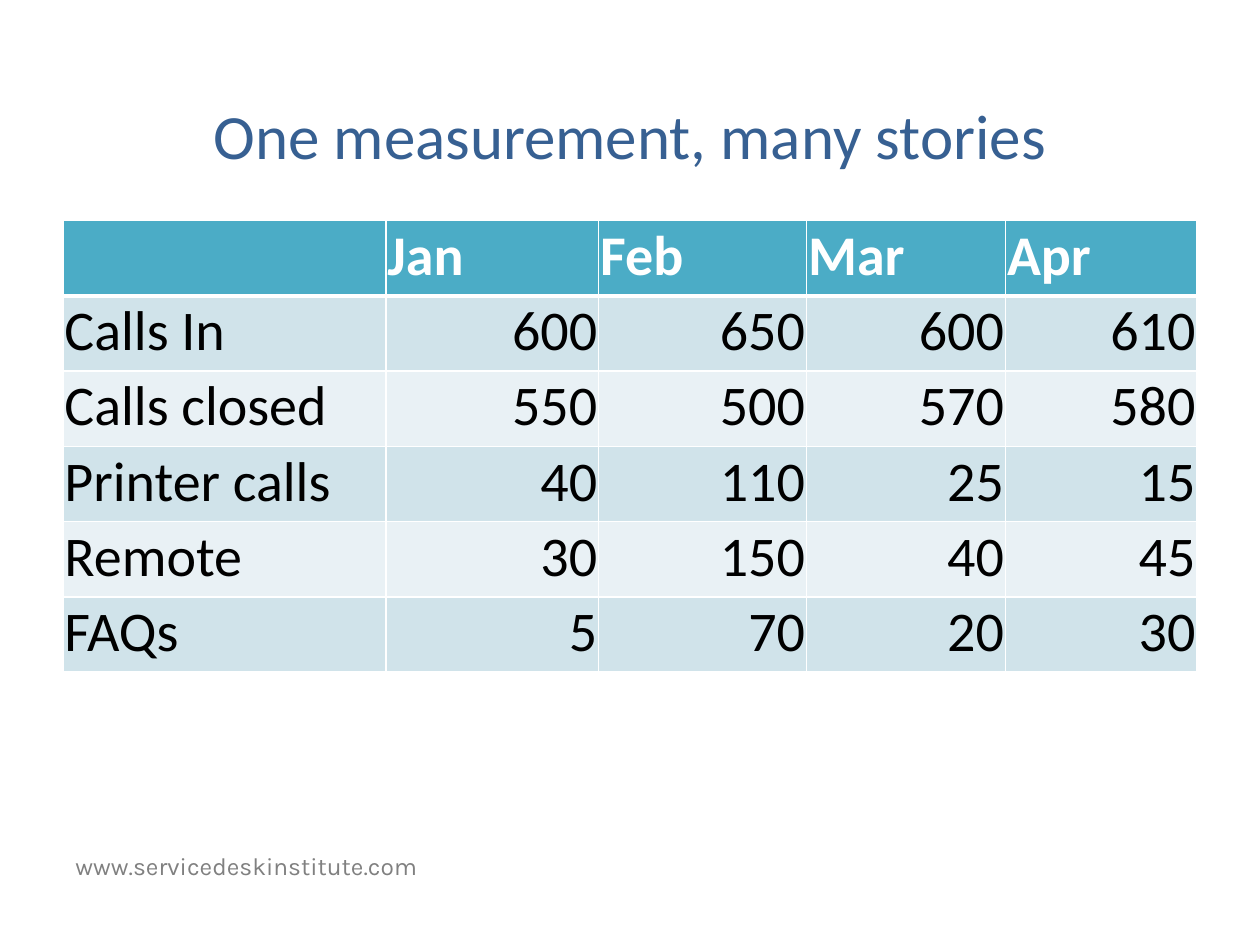
from dataclasses import dataclass

from lxml.etree import SubElement
from pptx import Presentation
from pptx.dml.color import RGBColor
from pptx.enum.text import MSO_ANCHOR, PP_ALIGN
from pptx.oxml.ns import qn
from pptx.util import Cm, Pt


@dataclass(frozen=True)
class Theme:
    font: str = "Calibri"
    web_font: str = "Karla"
    title: str = "376092"
    head: str = "4BACC6"
    bands: tuple = ("D0E3EA", "E9F1F5")
    text: str = "000000"
    white: str = "FFFFFF"
    grey: str = "808080"
    title_size: int = 36
    cell_size: int = 32
    foot_size: int = 14


THEME = Theme()
COLS = (6.51, 4.29, 4.19, 4.01, 3.86)
ROWS = (
    ("", "Jan", "Feb", "Mar", "Apr"),
    ("Calls In", "600", "650", "600", "610"),
    ("Calls closed", "550", "500", "570", "580"),
    ("Printer calls", "40", "110", "25", "15"),
    ("Remote", "30", "150", "40", "45"),
    ("FAQs", "5", "70", "20", "30"),
)


def place(shape, box):
    shape.left, shape.top, shape.width, shape.height = map(Cm, box)


def add_run(para, text, size, color, font=THEME.font, bold=False):
    run = para.add_run()
    run.text = text
    run.font.name = font
    run.font.size = Pt(size)
    run.font.bold = bold
    run.font.color.rgb = RGBColor.from_string(color)


def add_edges(cell, base):
    """Draw white borders; base is the width of the bottom one."""
    props = cell._tc.get_or_add_tcPr()
    for side, width in (("L", 1), ("R", 1), ("T", 1), ("B", base)):
        line = SubElement(props, qn(f"a:ln{side}"), w=str(Pt(width)))
        fill = SubElement(line, qn("a:solidFill"))
        SubElement(fill, qn("a:srgbClr"), val=THEME.white)


def add_title(slide, box):
    title = slide.shapes.title
    place(title, box)
    frame = title.text_frame
    frame.vertical_anchor = MSO_ANCHOR.MIDDLE
    para = frame.paragraphs[0]
    para.alignment = PP_ALIGN.CENTER
    add_run(para, "One measurement, many stories", THEME.title_size, THEME.title)


def fill_cell(cell, text, row, col):
    head = row == 0
    # Borders come before the fill in the cell properties
    add_edges(cell, 3 if head else 1)
    cell.fill.solid()
    color = THEME.head if head else THEME.bands[(row - 1) % 2]
    cell.fill.fore_color.rgb = RGBColor.from_string(color)
    cell.vertical_anchor = MSO_ANCHOR.BOTTOM
    cell.margin_left = cell.margin_right = cell.margin_top = Cm(0.03)
    cell.margin_bottom = Cm(0.13)
    if text:
        para = cell.text_frame.paragraphs[0]
        para.alignment = PP_ALIGN.LEFT if head or col == 0 else PP_ALIGN.RIGHT
        ink = THEME.white if head else THEME.text
        add_run(para, text, THEME.cell_size, ink, bold=head)


def add_grid(slide, box):
    frame = slide.shapes.add_table(len(ROWS), len(COLS), *map(Cm, box))
    table = frame.table
    for col, width in zip(table.columns, COLS):
        col.width = Cm(width)
    for row, texts in enumerate(ROWS):
        for col, text in enumerate(texts):
            fill_cell(table.cell(row, col), text, row, col)


def add_foot(slide, box):
    frame = slide.shapes.add_textbox(*map(Cm, box)).text_frame
    frame.word_wrap = True
    add_run(frame.paragraphs[0], "www.servicedeskinstitute.com",
            THEME.foot_size, THEME.grey, THEME.web_font)


def main():
    deck = Presentation()
    deck.slide_width, deck.slide_height = Cm(25.4), Cm(19.05)
    slide = deck.slides.add_slide(deck.slide_layouts[5])
    left, width = 1.27, 22.86
    add_foot(slide, (left, 17.04, 17.12, 0.86))
    add_title(slide, (left, 1.12, width, 3.18))
    add_grid(slide, (left, 4.45, width, 9.02))
    deck.save("out.pptx")


if __name__ == "__main__":
    main()
